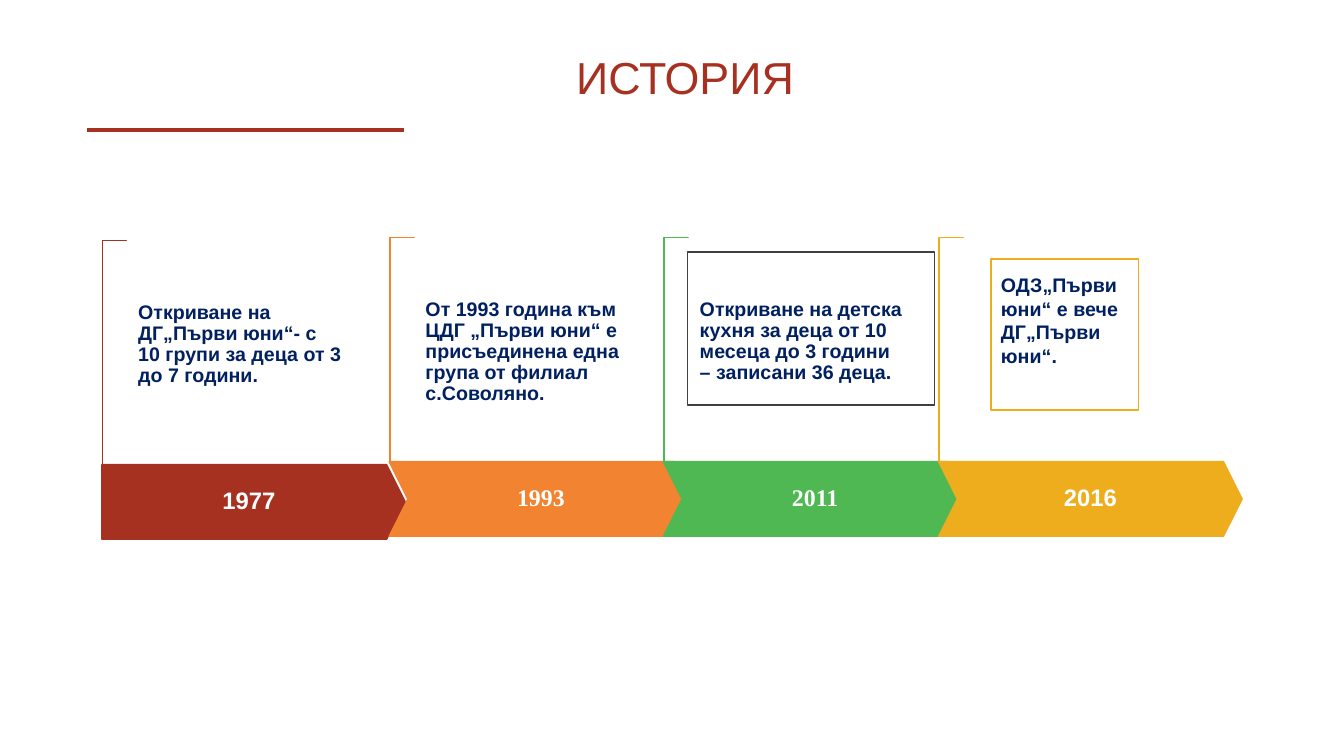
from dataclasses import dataclass
from lxml import etree
from pptx import Presentation, util as u
from pptx.dml.color import RGBColor
from pptx.enum import shapes, text
from pptx.oxml.ns import qn


@dataclass
class Theme:
    red: str = "A63121"
    orange: str = "F28330"
    green: str = "50B852"
    yellow: str = "EEAD1D"
    navy: str = "002060"
    gray: str = "404040"
    white: str = "FFFFFF"
    sans: str = "Arial"
    serif: str = "Times New Roman"
    title: int = 32
    year: int = 17
    story: int = 14


theme = Theme()
prs = Presentation()
prs.slide_width, prs.slide_height = u.Inches(13.33), u.Inches(7.5)
slide = prs.slides.add_slide(prs.slide_layouts[5])


def add_part(kind, box, fill, outline):
    part = slide.shapes.add_shape(kind, *map(u.Inches, box))
    part.shadow.inherit = False
    if fill:
        part.fill.solid()
        part.fill.fore_color.rgb = RGBColor.from_string(fill)
    else:
        part.fill.background()
    if outline:
        part.line.color.rgb = RGBColor.from_string(outline)
        part.line.width = u.Pt(1)
    else:
        part.line.fill.background()
    return part


def write(part, words, font, size, color, bold, align, anchor, insets, spacing):
    frame = part.text_frame
    frame.word_wrap = True
    frame.vertical_anchor = anchor
    (frame.margin_left, frame.margin_top,
     frame.margin_right, frame.margin_bottom) = map(u.Inches, insets)
    frame.text = words
    line = frame.paragraphs[0]
    line.alignment = align
    line.line_spacing = spacing
    line.font.name, line.font.size, line.font.bold = font, u.Pt(size), bold
    line.font.color.rgb = RGBColor.from_string(color)


center, left_side = text.PP_ALIGN.CENTER, text.PP_ALIGN.LEFT
top, middle, bottom = text.MSO_ANCHOR.TOP, text.MSO_ANCHOR.MIDDLE, text.MSO_ANCHOR.BOTTOM
preset = shapes.MSO_SHAPE

heading = slide.shapes.title
heading.left, heading.top, heading.width, heading.height = map(u.Inches, (1.42, 0.26, 10.75, 0.82))
write(heading, "ИСТОРИЯ", theme.sans, theme.title, theme.red, False,
      center, bottom, (0.1, 0.05, 0.1, 0.05), 0.9)

rule = slide.shapes.add_connector(shapes.MSO_CONNECTOR.STRAIGHT, u.Inches(0.86), u.Inches(1.29),
                                  u.Inches(4.01), u.Inches(1.29))
rule.line.color.rgb = RGBColor.from_string(theme.red)
rule.line.width = u.Pt(3)
etree.SubElement(rule._element.spPr, qn("a:effectLst"))

milestones = [
    ("1977", 1.01, 4.61, preset.PENTAGON, theme.red, theme.sans, None,
     "Откриване на ДГ„Първи юни“- с 10 групи за деца от 3 до 7 години."),
    ("1993", 3.86, 4.58, preset.CHEVRON, theme.orange, theme.serif, None,
     "От 1993 година към ЦДГ „Първи юни“ е присъединена една група от филиал с.Соволяно."),
    ("2011", 6.58, 4.58, preset.CHEVRON, theme.green, theme.serif, theme.gray,
     "Откриване на детска кухня за деца от 10 месеца до 3 години – записани 36 деца."),
    ("2016", 9.31, 4.58, preset.CHEVRON, theme.yellow, theme.sans, theme.yellow,
     "ОДЗ„Първи юни“ е вече ДГ„Първи юни“."),
]

for year, x, y, arrow_kind, color, year_font, frame_color, story in milestones:
    bracket = add_part(preset.CORNER, (x - 0.99, y - 1.23, 2.23, 0.24), theme.white, color)
    bracket.rotation = 90
    bracket.adjustments[0] = bracket.adjustments[1] = 0.01

    arrow = add_part(arrow_kind, (x, y, 3.01, 0.74), color, color)
    arrow.adjustments[0] = 0.25
    write(arrow, year, year_font, theme.year, theme.white, True,
          center, middle, (0.12, 0.24, 0.12, 0.24), 0.9)

    if year == "2016":
        box, anchor, insets, spacing = (9.83, 2.57, 1.46, 1.5), middle, (0.1, 0.05, 0.1, 0.34), 1.0
    else:
        box, anchor, insets, spacing = (x + 0.24, y - 2.08, 2.45, 1.52), top, (0.12, 0.47, 0.31, 0), u.Pt(15)
    note = add_part(preset.RECTANGLE, box, theme.white if frame_color else None, frame_color)
    write(note, story, theme.sans, theme.story, theme.navy, True, left_side, anchor, insets, spacing)

prs.save("out.pptx")
